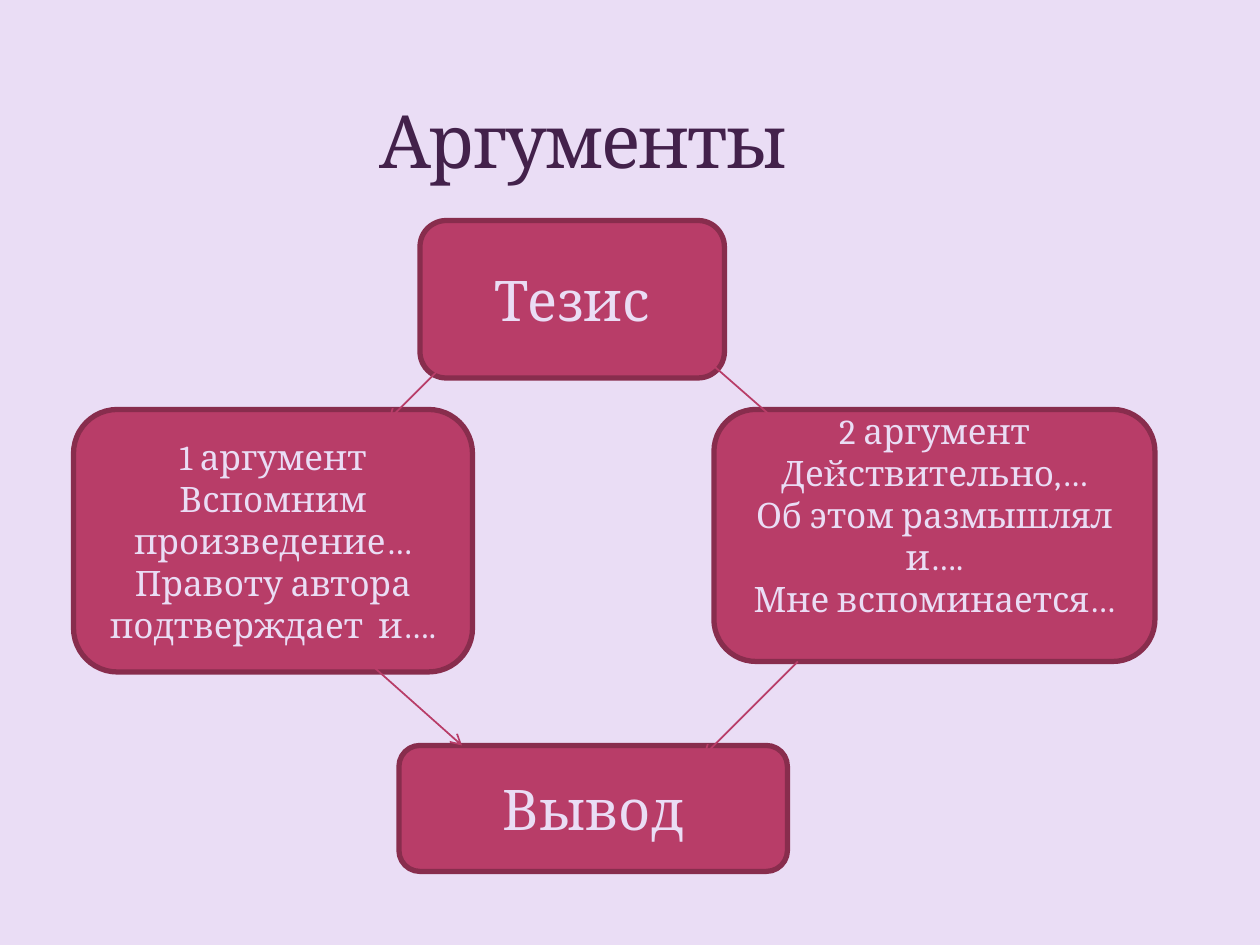
"""Build the slide with the scheme of thesis, arguments and conclusion."""
from lxml.etree import SubElement
from pptx import Presentation
from pptx.dml.color import RGBColor as RGB
from pptx.enum.shapes import MSO_CONNECTOR as CONN, MSO_SHAPE as SHAPE
from pptx.enum.text import MSO_ANCHOR as ANCHOR, PP_ALIGN as ALIGN
from pptx.oxml.ns import qn
from pptx.util import Inches, Pt

COLORS = {"back": "EADDF5", "title": "43214B", "box": "B83D68", "edge": "882D4D"}
C = {name: RGB.from_string(value) for name, value in COLORS.items()}
FONT = "Cambria"
COLS, ROWS = 120, 90

prs = Presentation()
prs.slide_width, prs.slide_height = Inches(10), Inches(7.5)
col, row = prs.slide_width // COLS, prs.slide_height // ROWS
s = prs.slides.add_slide(prs.slide_layouts[6])
s.background.fill.solid()
s.background.fill.fore_color.rgb = C["back"]


def write(tf, lines, size, color, align):
    tf.word_wrap = True
    for i, line in enumerate(lines):
        p = tf.add_paragraph() if i else tf.paragraphs[0]
        p.text, p.alignment = line, align
        p.font.name, p.font.size, p.font.color.rgb = FONT, Pt(size), color


title = s.shapes.add_textbox(35 * col, 2 * row, 79 * col, 16 * row)
title.text_frame.vertical_anchor = ANCHOR.BOTTOM
write(title.text_frame, ["Аргументы"], 42, C["title"], ALIGN.LEFT)
r = title.text_frame.paragraphs[0].runs[0]
r.font._element.set("spc", "-100")

boxes = [
    (40, 21, 29, 15, 32, 0, ["Тезис"]),
    (7, 39, 38, 25, 20, 0, ["1 аргумент", "Вспомним произведение…",
                            "Правоту автора подтверждает  и…."]),
    (68, 39, 42, 24, 20, 4, ["2 аргумент", "Действительно,…",
                             "Об этом размышлял и….", "Мне вспоминается…"]),
    (38, 71, 37, 12, 32, 0, ["Вывод"]),
]
for x, y, w, h, size, free_rows, lines in boxes:
    sp = s.shapes.add_shape(SHAPE.ROUNDED_RECTANGLE, x * col, y * row, w * col, h * row)
    sp.shadow.inherit = False
    sp.fill.solid()
    sp.fill.fore_color.rgb = C["box"]
    sp.line.color.rgb, sp.line.width = C["edge"], Pt(3)
    tf = sp.text_frame
    tf.vertical_anchor = ANCHOR.MIDDLE
    tf.margin_bottom += free_rows * row
    write(tf, lines, size, C["back"], ALIGN.CENTER)

arrows = [(35, 63, 44, 71), (67, 34, 83, 48), (42, 35, 37, 40), (76, 63, 67, 72)]
for x1, y1, x2, y2 in arrows:
    arrow = s.shapes.add_connector(CONN.STRAIGHT, x1 * col, y1 * row, x2 * col, y2 * row)
    arrow.line.color.rgb, arrow.line.width = C["box"], Pt(1)
    SubElement(arrow.line._get_or_add_ln(), qn("a:tailEnd"), type="arrow")
    SubElement(arrow._element.spPr, qn("a:effectLst"))

prs.save("out.pptx")
